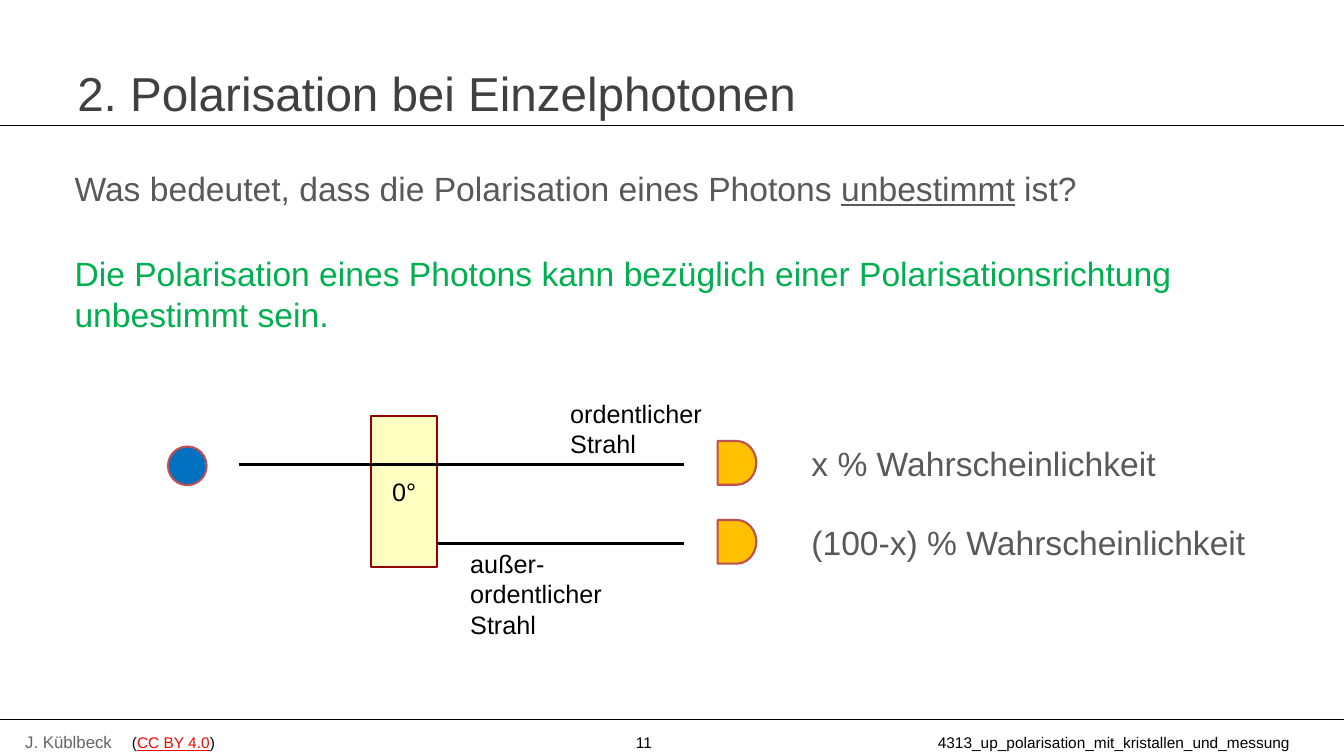
from lxml import etree
from pptx import Presentation
from pptx import util as u
from pptx.dml.color import RGBColor
from pptx.enum import shapes, text
from pptx.oxml.ns import qn

BLACK = RGBColor(0, 0, 0)
RED = RGBColor(0xFF, 0, 0)
GREEN = RGBColor(0, 0xB0, 0x50)
BLUE = RGBColor(0, 0x70, 0xC0)
AMBER = RGBColor(0xFF, 0xC0, 0)
CREAM = RGBColor(0xFF, 0xFF, 0xC1)
MAROON = RGBColor(0x92, 0, 0)
ROSE = RGBColor(0xBD, 0x51, 0x51)
DARK = RGBColor(0x40, 0x40, 0x40)
GREY = RGBColor(0x59, 0x59, 0x59)
PALE = RGBColor(0x64, 0x64, 0x64)

# Grid of 160 columns by 90 rows
COLS, ROWS = 160, 90
WIDE, HIGH = u.Inches(13.33), u.Inches(7.5)
SHAPE = shapes.MSO_SHAPE
ALIGN = text.PP_ALIGN
MID = text.MSO_ANCHOR.MIDDLE


def grid(box, x, y):
    """Point x columns and y rows inside a region."""
    return round((box[0] + x) * WIDE / COLS), round((box[1] + y) * HIGH / ROWS)


def area(box, x, y, w, h):
    return grid(box, x, y) + grid((0, 0), w, h)


def move(item, box):
    item.left, item.top, item.width, item.height = area(box, 0, 0, *box[2:])


def style(para, size, color, align=ALIGN.LEFT):
    para.alignment = align
    font = para.font
    font.name, font.size, font.color.rgb = "Arial", u.Pt(size), color


def label(slide, spot, words, size, color, align=ALIGN.LEFT, anchor=MID, pad=0):
    frame = slide.shapes.add_textbox(*spot).text_frame
    frame.word_wrap = True
    frame.vertical_anchor = anchor
    frame.margin_left = frame.margin_right = u.Inches(pad)
    frame.margin_top = frame.margin_bottom = u.Inches(pad / 2)
    para = frame.paragraphs[0]
    para.text = words
    style(para, size, color, align)
    return para


def rule(slide, start, end, width):
    line = slide.shapes.add_connector(shapes.MSO_CONNECTOR.STRAIGHT, *start, *end)
    line.line.color.rgb = BLACK
    line.line.width = u.Pt(width)
    etree.SubElement(line._element.spPr, qn("a:effectLst"))


def part(slide, kind, spot, fill, edge):
    item = slide.shapes.add_shape(kind, *spot)
    item.shadow.inherit = False
    item.fill.solid()
    item.fill.fore_color.rgb = fill
    item.line.color.rgb = edge
    item.line.width = u.Pt(1.5)
    return item


def head(slide, box):
    title = slide.shapes.title
    move(title, box)
    title.text = "2. Polarisation bei Einzelphotonen"
    frame = title.text_frame
    frame.auto_size = text.MSO_AUTO_SIZE.NONE
    frame.vertical_anchor = MID
    style(frame.paragraphs[0], 34, DARK)
    rule(slide, grid((0, box[1]), 0, 7.7), grid((0, box[1]), COLS, 7.7), 0.75)


def body(slide, box):
    item = slide.placeholders[1]
    move(item, box)
    frame = item.text_frame
    frame.auto_size = text.MSO_AUTO_SIZE.NONE
    ask = frame.paragraphs[0]
    for words, under in (("Was bedeutet, dass die Polarisation eines Photons ", False),
                         ("unbestimmt", True), (" ist?", False)):
        run = ask.add_run()
        run.text = words
        run.font.underline = under
    answer = frame.add_paragraph()
    answer.text = ("Die Polarisation eines Photons kann bezüglich einer "
                   "Polarisationsrichtung unbestimmt sein.")
    for para, color, gap in ((ask, GREY, 3), (answer, GREEN, 32)):
        style(para, 24, color)
        para.space_before = u.Pt(gap)
        props = para._p.get_or_add_pPr()
        props.set("marL", str(u.Inches(0.12)))
        props.set("indent", "0")
        # The bullet setting follows the spacing
        etree.SubElement(props, qn("a:buNone"))
        props.append(props.find(qn("a:defRPr")))


def setup(slide, box):
    # Crystal
    left, wide = 24.16, 7.92
    block = part(slide, SHAPE.RECTANGLE, area(box, left, 2.76, wide, 18), CREAM, MAROON)
    frame = block.text_frame
    frame.vertical_anchor = MID
    frame.text = "0°"
    style(frame.paragraphs[0], 18, BLACK, ALIGN.CENTER)

    # Photon source
    part(slide, SHAPE.OVAL, area(box, 0, 6.36, 4.6, 4.6), BLUE, ROSE)

    # Beams, detectors and chances
    rows = ((8.5, 8.44, "x % Wahrscheinlichkeit"),
            (17.9, left + wide, "(100-x) % Wahrscheinlichkeit"))
    for y, start, chance in rows:
        rule(slide, grid(box, start, y), grid(box, 61.4, y), 2)
        part(slide, SHAPE.FLOWCHART_DELAY, area(box, 65.44, y - 2.8, 4.6, 5.2),
             AMBER, ROSE)
        label(slide, area(box, 76.6, y - 4, 56, 7.6), chance, 24, GREY)

    # Beam names
    top = text.MSO_ANCHOR.TOP
    for x, y, w, h, words in ((46.7, 0, 18.5, 8.5, "ordentlicher\vStrahl"),
                              (34.8, 17.9, 19, 12.1, "außer-\vordentlicher\vStrahl")):
        label(slide, area(box, x, y, w, h), words, 18, BLACK, anchor=top, pad=0.1)


def foot(slide, box):
    rule(slide, grid(box, 0, 0), grid(box, COLS, 0), 0.75)
    y, h = 1.55, 2.3
    label(slide, area(box, 3, y - 0.1, 12, h), "J. Küblbeck", 12, PALE)
    grant = label(slide, area(box, 15.7, y, 14, h), "", 11, BLACK)
    for words in ("(", "CC BY 4.0", ")"):
        run = grant.add_run()
        run.text = words
        if len(words) > 1:
            run.font.color.rgb = RED
            run.font.underline = True
    label(slide, area(box, 75.7, y, 8, h), "11", 11, BLACK)
    label(slide, area(box, 100, y, 53.6, h),
          "4313_up_polarisation_mit_kristallen_und_messung", 11, BLACK, ALIGN.RIGHT)


def main():
    deck = Presentation()
    deck.slide_width, deck.slide_height = WIDE, HIGH
    slide = deck.slides.add_slide(deck.slide_layouts[1])
    head(slide, (8, 7.2, 144, 7.6))
    body(slide, (6.24, 19.4, 150.5, 61.4))
    setup(slide, (20, 46.8, 130, 30))
    foot(slide, (0, 85.7, COLS, 4.3))
    deck.save("out.pptx")


if __name__ == "__main__":
    main()
